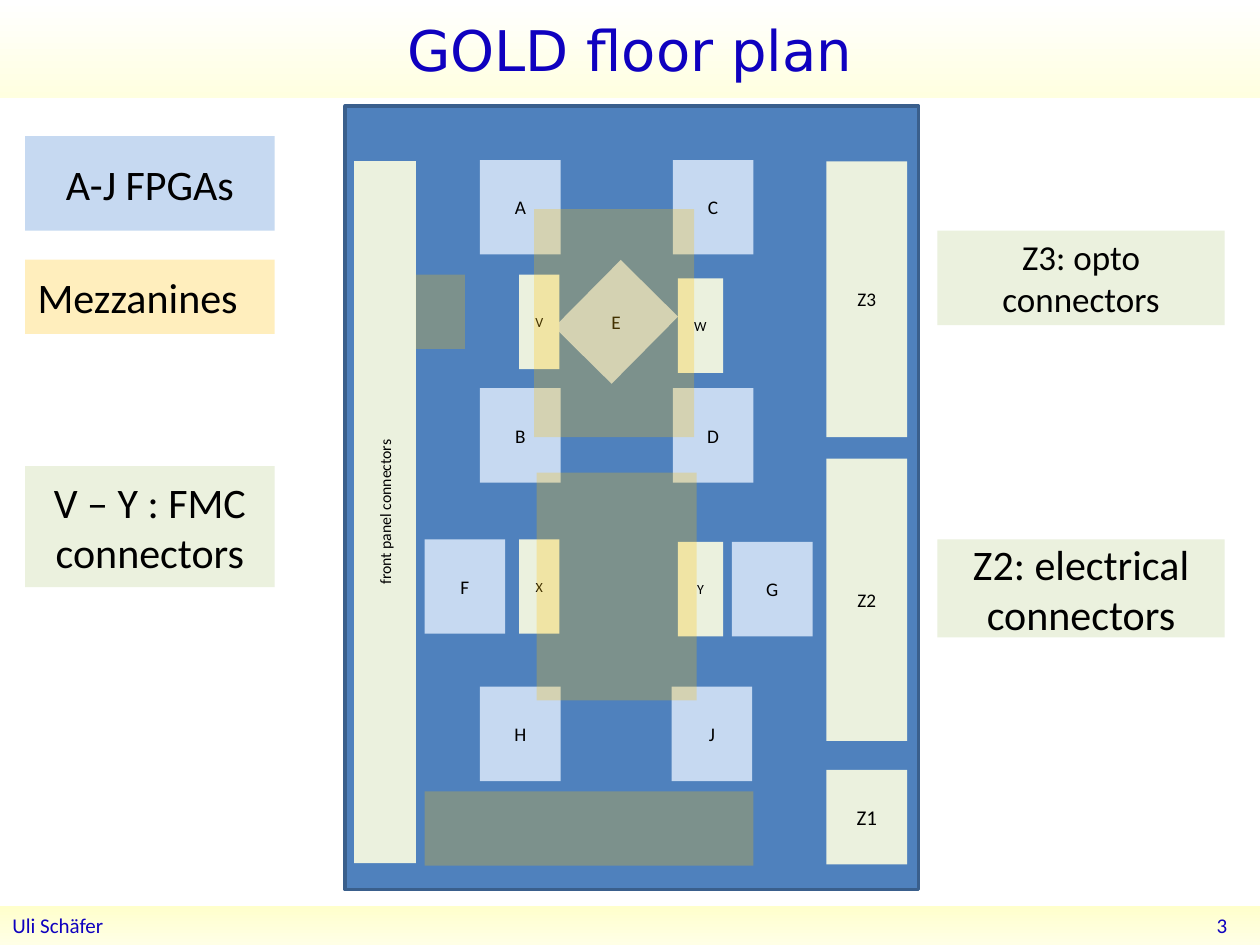
from pptx import Presentation
from pptx.dml.color import RGBColor
from pptx.enum import shapes, text
from pptx.oxml import parse_xml
from pptx.oxml.ns import nsdecls, qn
from pptx.util import Inches, Pt

THEME = {
    "font": "Calibri", "title_font": "DejaVu Sans",
    "ink": "000000", "accent": "0F01BF",
    "board": "4F81BD", "board_edge": "3A5F8C",
    "fpga": "C6D9F1", "connector": "EBF1DE", "mezzanine": "FFC000",
    "mezzanine_alpha": 26,
    "title_band": ("FFFFFF", "FFFFE0"), "footer_band": ("FFFFCC", "FFFFE6"),
    "title": 32, "footer": 12, "legend": 24, "legend_small": 20,
    "label": 11, "fmc": 8, "panel": 9,
}

TITLE = "GOLD floor plan"
AUTHOR, PAGE_NUMBER = "Uli Schäfer", "3"

BOARD = (2.74, 0.84, 4.55, 6.22)
CHIP = (0.64, 0.75)
FPGAS = [
    ("A", 3.81, 1.27), ("C", 5.34, 1.27),
    ("B", 3.81, 3.08), ("D", 5.34, 3.08),
    ("F", 3.37, 4.28), ("G", 5.81, 4.3),
    ("H", 3.81, 5.45), ("J", 5.33, 5.45),
]
CENTRE_FPGA = ("E", 4.57, 2.18)
CENTRE_ANGLE = 44.7
BACKPLANE_X = 6.56
BACKPLANE = [  # name, top, height, size
    ("Z1", 6.11, 0.75, "footer"), ("Z2", 3.64, 2.24, "label"), ("Z3", 1.28, 2.19, "label"),
]
FMC_COLUMNS = [  # left, width, (name, top) pairs
    (4.12, 0.32, [("V", 2.18), ("X", 4.28)]),
    (5.38, 0.36, [("W", 2.21), ("Y", 4.3)]),
]
FRONT_PANEL = ("front panel connectors", (2.81, 1.28, 0.49, 5.57))
LEGEND = [  # wording, position, fill, size
    ("A-J FPGAs", (0.2, 1.08, 1.98, 0.75), "fpga", "legend"),
    ("V – Y : FMC connectors", (0.2, 3.7, 1.98, 0.96), "connector", "legend"),
    ("Z3: opto connectors", (7.44, 1.83, 2.28, 0.75), "connector", "legend_small"),
    ("Z2: electrical connectors", (7.44, 4.28, 2.28, 0.78), "connector", "legend"),
]
MEZZANINE_LEGEND = ("Mezzanines", (0.2, 2.06, 1.98, 0.59))
MEZZANINES = [
    (3.3, 2.18, 0.39, 0.59), (4.24, 1.66, 1.27, 1.81),
    (4.26, 3.75, 1.27, 1.81), (3.37, 6.28, 2.61, 0.59),
]

LEFT, CENTRE, RIGHT = text.PP_ALIGN.LEFT, text.PP_ALIGN.CENTER, text.PP_ALIGN.RIGHT


def colour(name):
    return RGBColor.from_string(THEME[name])


def write(shape, wording, size, align=CENTRE, ink="ink", font="font"):
    frame = shape.text_frame
    frame.word_wrap = True
    frame.auto_size = text.MSO_AUTO_SIZE.NONE
    frame.vertical_anchor = text.MSO_ANCHOR.MIDDLE
    frame.text = wording
    para = frame.paragraphs[0]
    para.alignment = align
    para.font.size = Pt(THEME[size])
    para.font.name = THEME[font]
    para.font.color.rgb = colour(ink)


def add_block(page, place, fill=None):
    block = page.shapes.add_shape(shapes.MSO_SHAPE.RECTANGLE, *map(Inches, place))
    block.shadow.inherit = False
    block.line.fill.background()
    if fill:
        block.fill.solid()
        block.fill.fore_color.rgb = colour(fill)
    return block


def add_label(page, wording, place, fill, size):
    block = add_block(page, place, fill)
    write(block, wording, size)
    return block


def add_mezzanine(page, place):
    block = add_block(page, place, "mezzanine")
    tint = block.fill._xPr.find(qn("a:solidFill"))[0]
    alpha = THEME["mezzanine_alpha"] * 1000
    tint.append(parse_xml(f'<a:alpha {nsdecls("a")} val="{alpha}"/>'))
    return block


def shade_down(shape, band):
    """Fill with a gradient running from top to bottom."""
    shape.fill.gradient()
    shape.fill.gradient_angle = 270
    for stop, value in zip(shape.fill.gradient_stops, THEME[band]):
        stop.color.rgb = RGBColor.from_string(value)


def add_frame(page):
    title = page.shapes.title
    title.left, title.top, title.width, title.height = map(Inches, (0, 0, 10, 0.78))
    shade_down(title, "title_band")
    write(title, TITLE, "title", ink="accent", font="title_font")

    footer = add_block(page, (0, 7.19, 10, 0.31))
    shade_down(footer, "footer_band")
    write(footer, AUTHOR, "footer", LEFT, "accent")
    number = page.shapes.add_textbox(*map(Inches, (7.73, 7.18, 2.11, 0.32)))
    write(number, PAGE_NUMBER, "footer", RIGHT, "accent")


def add_floor_plan(page):
    board = add_block(page, BOARD, "board")
    board.line.color.rgb = colour("board_edge")
    board.line.width = Pt(2)

    for name, left, top in FPGAS:
        add_label(page, name, (left, top, *CHIP), "fpga", "label")
    name, *corner = CENTRE_FPGA
    add_block(page, (*corner, *CHIP), "fpga").rotation = CENTRE_ANGLE
    upright = page.shapes.add_textbox(*map(Inches, (*corner, *CHIP)))
    write(upright, name, "label")

    for name, top, height, size in BACKPLANE:
        add_label(page, name, (BACKPLANE_X, top, CHIP[0], height), "connector", size)
    for left, width, sockets in FMC_COLUMNS:
        for name, top in sockets:
            add_label(page, name, (left, top, width, CHIP[1]), "connector", "fmc")
    panel = add_label(page, *FRONT_PANEL, "connector", "panel")
    panel.text_frame._txBody.bodyPr.set("vert", "vert270")

    for place in MEZZANINES:
        add_mezzanine(page, place)


def add_legend(page):
    for wording, place, fill, size in LEGEND:
        add_label(page, wording, place, fill, size)
    wording, place = MEZZANINE_LEGEND
    write(add_mezzanine(page, place), wording, "legend", LEFT)


def main():
    deck = Presentation()
    deck.slide_width, deck.slide_height = Inches(10), Inches(7.5)
    page = deck.slides.add_slide(deck.slide_layouts[5])
    add_frame(page)
    add_floor_plan(page)
    add_legend(page)
    deck.save("out.pptx")


if __name__ == "__main__":
    main()
